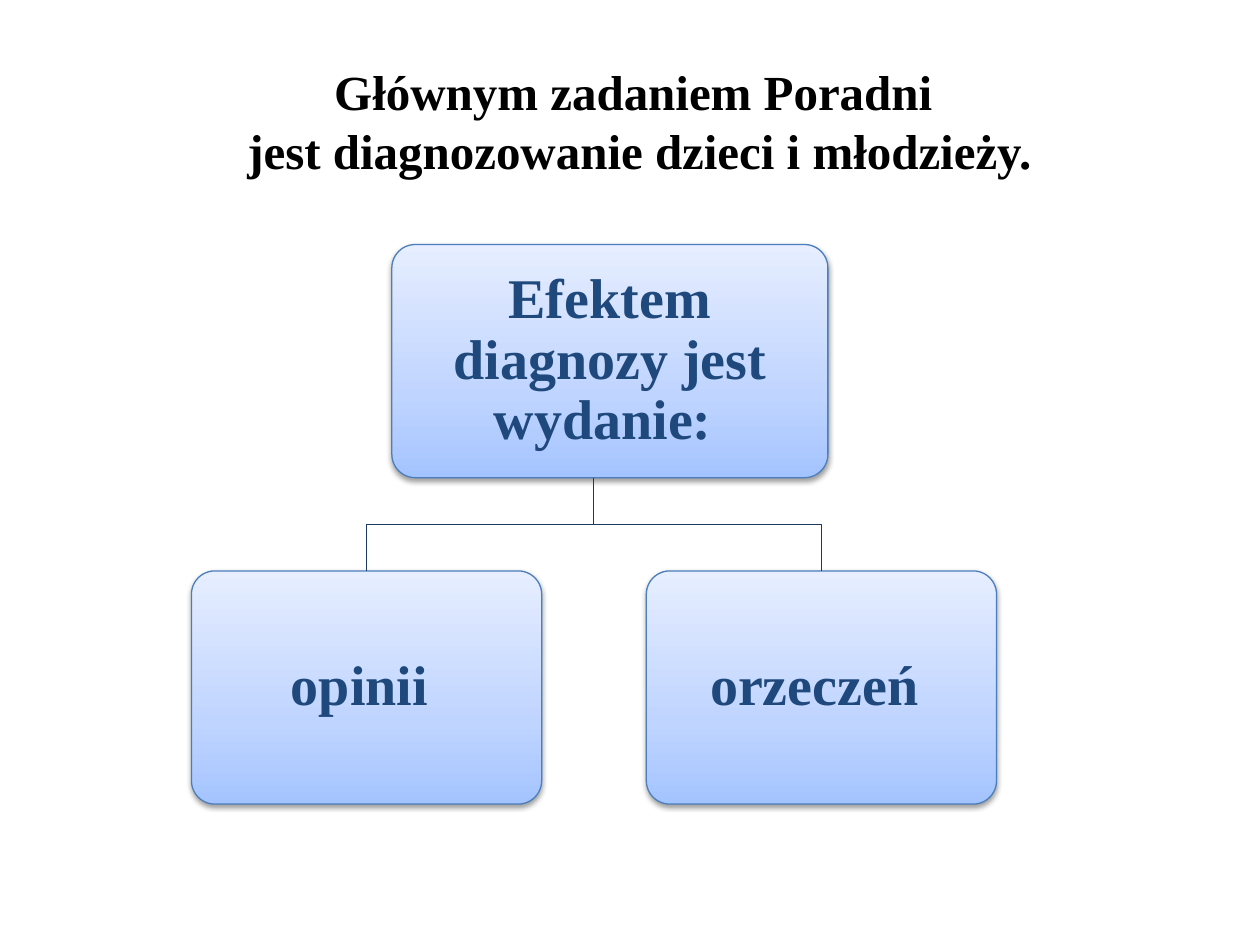
"""Builds a slide with a two-branch tree of what a diagnosis leads to."""
from copy import deepcopy

from lxml import etree
from pptx import Presentation
from pptx import util as u
from pptx.dml.color import RGBColor
from pptx.enum import shapes, text
from pptx.oxml import ns

COLORS = {"title": "000000", "text": "1F497D", "border": "4B7EBC", "branch": "193A64", "shadow": "000000"}
GRADIENT = [(0, "A4C4FF"), (0.35, "BFD4FF"), (1, "E6EEFF")]
FONT = "Times New Roman"
TRUNK_X = u.Cm(11.96)


def rgb(name):
    return RGBColor.from_string(COLORS[name])


def format_runs(p, size, color):
    p.alignment = text.PP_ALIGN.CENTER
    for r in p.runs:
        r.font.name, r.font.size, r.font.bold = FONT, u.Pt(size), True
        r.font.color.rgb = rgb(color)


def add_title(s, lines):
    sp = s.shapes.title
    sp.left, sp.top, sp.width, sp.height = u.Cm(2.49), u.Cm(1.12), u.Cm(20.8), u.Cm(3.81)
    tf = sp.text_frame
    tf.auto_size = text.MSO_AUTO_SIZE.NONE
    tf.vertical_anchor = text.MSO_ANCHOR.TOP
    tf.text = "\n".join(lines)
    for p in tf.paragraphs:
        format_runs(p, 28, "title")


def fill_gradient(sp):
    sp.fill.gradient()
    sp.fill.gradient_angle = 90
    stops = sp._element.spPr.find(".//" + ns.qn("a:gsLst"))
    stops.append(deepcopy(stops[0]))
    for stop, (position, color) in zip(sp.fill.gradient_stops, GRADIENT):
        stop.position = position
        stop.color.rgb = RGBColor.from_string(color)


def add_shadow(sp):
    sp.shadow.inherit = False
    effects = sp._element.spPr.find(ns.qn("a:effectLst"))
    shadow = etree.SubElement(effects, ns.qn("a:outerShdw"), blurRad="40000", dist="20000",
                              dir="5400000", rotWithShape="0")
    color = etree.SubElement(shadow, ns.qn("a:srgbClr"), val=COLORS["shadow"])
    etree.SubElement(color, ns.qn("a:alpha"), val="38000")


def add_box(s, label, left, top, width):
    sp = s.shapes.add_shape(shapes.MSO_SHAPE.ROUNDED_RECTANGLE, u.Cm(left), u.Cm(top), u.Cm(width), u.Cm(4.7))
    sp.adjustments[0] = 0.1
    fill_gradient(sp)
    sp.line.color.rgb, sp.line.width = rgb("border"), u.Pt(0.75)
    add_shadow(sp)
    tf = sp.text_frame
    tf.word_wrap = True
    tf.vertical_anchor = text.MSO_ANCHOR.MIDDLE
    tf.margin_left = tf.margin_right = tf.margin_top = tf.margin_bottom = u.Cm(0.33)
    tf.text = label
    p = tf.paragraphs[0]
    p.line_spacing, p.space_after = 0.9, u.Pt(11.2)
    format_runs(p, 32, "text")
    return sp


def add_branch(s, parent, child):
    start, end = parent.top + parent.height, child.top
    middle, x = (start + end) // 2, child.left + child.width // 2
    path = s.shapes.build_freeform(TRUNK_X, start)
    path.add_line_segments([(TRUNK_X, middle), (x, middle), (x, end)], close=False)
    sp = path.convert_to_shape()
    sp.shadow.inherit = False
    sp.fill.background()
    sp.line.color.rgb, sp.line.width = rgb("branch"), u.Pt(0.75)


def main():
    prs = Presentation()
    prs.slide_width, prs.slide_height = u.Cm(25.4), u.Cm(19.05)
    s = prs.slides.add_slide(prs.slide_layouts[5])
    add_title(s, ["Głównym zadaniem Poradni ", "jest diagnozowanie dzieci i młodzieży."])
    root = add_box(s, "Efektem diagnozy jest wydanie: ", 7.9, 4.93, 8.79)
    for label, left in [("opinii ", 3.86), ("orzeczeń ", 13.03)]:
        add_branch(s, root, add_box(s, label, left, 11.51, 7.06))
    prs.save("out.pptx")


if __name__ == "__main__":
    main()
